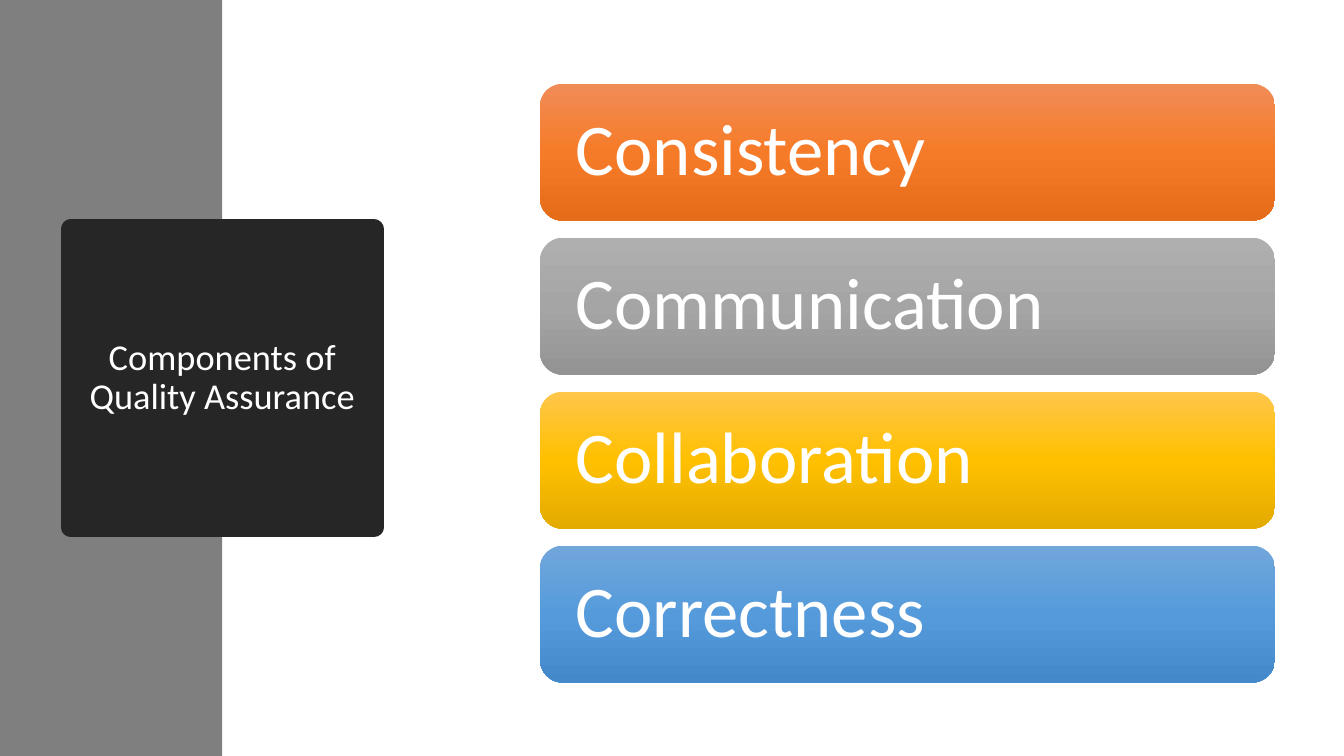
from copy import deepcopy

from pptx import Presentation
from pptx.dml.color import RGBColor
from pptx.enum.shapes import MSO_SHAPE
from pptx.enum.text import MSO_ANCHOR, PP_ALIGN
from pptx.util import Cm, Pt

RECTANGLE = MSO_SHAPE.RECTANGLE
ROUNDED = MSO_SHAPE.ROUNDED_RECTANGLE
MIDDLE = MSO_ANCHOR.MIDDLE
LEFT = PP_ALIGN.LEFT
CENTER = PP_ALIGN.CENTER

COMPONENTS = [
    ("Consistency", ("F18C57", "F67B28", "E56C19")),
    ("Communication", ("AFAFAF", "A5A5A5", "939393")),
    ("Collaboration", ("FFC64B", "FFC000", "E3AB00")),
    ("Correctness", ("71A6DB", "559BDB", "448ACA")),
]
BAR_TOP = 2.11
BAR_PITCH = 3.88


def color(value):
    return RGBColor.from_string(value)


class SlideBuilder:
    font = "Calibri"
    text_color = "FFFFFF"

    def __init__(self, page):
        self.page = page

    def shape(self, kind, left, top, width, height):
        box = self.page.shapes.add_shape(kind, Cm(left), Cm(top), Cm(width), Cm(height))
        box.shadow.inherit = False
        box.line.fill.background()
        return box

    def panel(self, left, top, width, height, fill):
        box = self.shape(RECTANGLE, left, top, width, height)
        box.fill.solid()
        box.fill.fore_color.rgb = color(fill)
        return box

    def text(self, box, words, size, align, inset):
        frame = box.text_frame
        frame.word_wrap = True
        frame.vertical_anchor = MIDDLE
        frame.margin_left = frame.margin_right = Cm(inset)
        para = frame.paragraphs[0]
        para.alignment = align
        para.line_spacing = 0.9
        span = para.add_run()
        span.text = words
        span.font.name = self.font
        span.font.size = Pt(size)
        span.font.color.rgb = color(self.text_color)

    def title(self, words, left, top, width, height, fill):
        box = self.panel(left, top, width, height, fill)
        box.line.color.rgb = color(fill)
        box.line.width = Pt(13.75)
        self.text(box, words, 26, CENTER, 0.25)

    def bar(self, words, top, shades):
        box = self.shape(ROUNDED, 13.61, top, 18.52, 3.45)
        box.fill.gradient()
        box.fill.gradient_angle = 270
        first = box._element.spPr.xpath("./a:gradFill/a:gsLst/a:gs")[0]
        first.addnext(deepcopy(first))
        for stop, position, shade in zip(box.fill.gradient_stops, (0, 0.5, 1), shades):
            stop.position = position
            stop.color.rgb = color(shade)
        self.text(box, words, 52, LEFT, 0.73)


def main():
    deck = Presentation()
    deck.slide_width = Cm(33.87)
    deck.slide_height = Cm(19.05)
    builder = SlideBuilder(deck.slides.add_slide(deck.slide_layouts[6]))
    builder.panel(0, 0, 5.6, 19.05, "7F7F7F")
    builder.title("Components of Quality Assurance", 1.78, 5.77, 7.65, 7.52, "262626")
    for index, (words, shades) in enumerate(COMPONENTS):
        builder.bar(words, BAR_TOP + index * BAR_PITCH, shades)
    deck.save("out.pptx")


if __name__ == "__main__":
    main()
